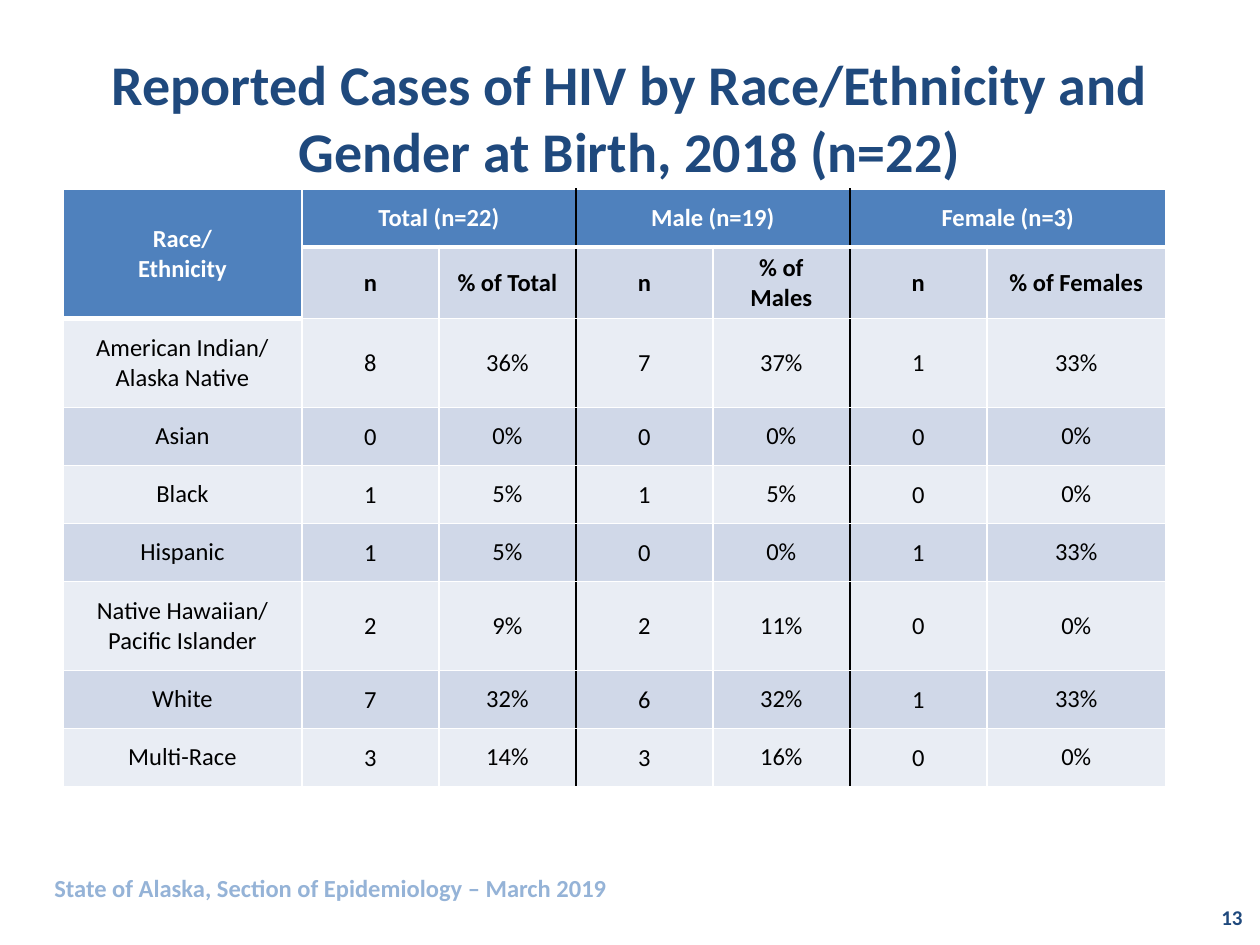
from dataclasses import dataclass

from lxml.etree import SubElement
from pptx import Presentation
from pptx.dml.color import RGBColor
from pptx.enum.text import MSO_ANCHOR as Anchor, PP_ALIGN as Align
from pptx.oxml.ns import qn
from pptx.util import Emu, Pt

EMU_PER_PX = 914400 // 126


@dataclass(frozen=True)
class Theme:
    font: str = "Calibri"
    navy: str = "1F497D"
    pale_blue: str = "95B3D7"
    header: str = "4F81BD"
    band_dark: str = "D0D8E8"
    band_light: str = "E9EDF4"
    white: str = "FFFFFF"
    black: str = "000000"
    title_size: int = 32
    body_size: int = 14
    number_size: int = 12
    thin: int = 1
    thick: int = 3


@dataclass(frozen=True)
class Label:
    text: str
    left: int
    top: int
    width: int
    height: int
    size: int
    color: str
    align: Align
    anchor: Anchor


@dataclass(frozen=True)
class CellStyle:
    fill: str
    color: str
    bold: bool


@dataclass(frozen=True)
class CaseRow:
    race: str
    total: tuple[str, str]
    male: tuple[str, str]
    female: tuple[str, str]

    def texts(self) -> list[str]:
        return [self.race, *self.total, *self.male, *self.female]


THEME = Theme()
HEADER = CellStyle(THEME.header, THEME.white, True)
SUBHEADER = CellStyle(THEME.band_dark, THEME.black, True)
BANDS = (
    CellStyle(THEME.band_light, THEME.black, False),
    CellStyle(THEME.band_dark, THEME.black, False),
)

LABELS = [
    Label("Reported Cases of HIV by Race/Ethnicity and Gender at Birth, 2018 (n=22)",
          63, 38, 1134, 157, THEME.title_size, THEME.navy, Align.CENTER, Anchor.MIDDLE),
    Label("13", 961, 892, 294, 50, THEME.number_size, THEME.navy,
          Align.RIGHT, Anchor.MIDDLE),
    Label("State of Alaska, Section of Epidemiology – March 2019",
          42, 867, 882, 43, THEME.body_size, THEME.pale_blue, Align.LEFT, Anchor.TOP),
]

TABLE_LEFT, TABLE_TOP = 63, 189
COLUMN_WIDTHS = [239] + [137] * 5 + [179]
ROW_HEIGHT, TWO_LINE_HEIGHT = 58, 89
COUNT_COLUMNS = (1, 3, 5)
GROUP_ENDS = (2, 4)

GROUP_HEADERS = ["Race/\nEthnicity", "Total (n=22)", "", "Male (n=19)", "", "Female (n=3)", ""]
COLUMN_HEADERS = ["", "n", "% of Total", "n", "% of Males", "n", "% of Females"]
CASES = [
    CaseRow("American Indian/\nAlaska Native", ("8", "36%"), ("7", "37%"), ("1", "33%")),
    CaseRow("Asian", ("0", "0%"), ("0", "0%"), ("0", "0%")),
    CaseRow("Black", ("1", "5%"), ("1", "5%"), ("0", "0%")),
    CaseRow("Hispanic", ("1", "5%"), ("0", "0%"), ("1", "33%")),
    CaseRow("Native Hawaiian/\nPacific Islander", ("2", "9%"), ("2", "11%"), ("0", "0%")),
    CaseRow("White", ("7", "32%"), ("6", "32%"), ("1", "33%")),
    CaseRow("Multi-Race", ("3", "14%"), ("3", "16%"), ("0", "0%")),
]


def px(length: int) -> Emu:
    return Emu(length * EMU_PER_PX)


def write_lines(frame, text: str, size: int, color: str, bold: bool, align: Align) -> None:
    """Write each line of the text as its own paragraph."""
    for index, line in enumerate(text.split("\n")):
        para = frame.add_paragraph() if index else frame.paragraphs[0]
        para.alignment = align
        span = para.add_run()
        span.text = line
        span.font.name = THEME.font
        span.font.size = Pt(size)
        span.font.bold = bold
        span.font.color.rgb = RGBColor.from_string(color)


def add_label(page, label: Label) -> None:
    box = page.shapes.add_textbox(
        px(label.left), px(label.top), px(label.width), px(label.height))
    box.text_frame.word_wrap = True
    box.text_frame.vertical_anchor = label.anchor
    write_lines(box.text_frame, label.text, label.size, label.color, True, label.align)


def add_border(cell, side: str, color: str, width: int) -> None:
    properties = cell._tc.get_or_add_tcPr()
    line = SubElement(properties, qn(f"a:ln{side}"), w=str(Pt(width)))
    SubElement(SubElement(line, qn("a:solidFill")), qn("a:srgbClr"), val=color)


def style_borders(cell, row: int, column: int) -> None:
    """Rule the cell in white, with black between the column groups."""
    last_column = column + cell.span_width - 1 if cell.is_merge_origin else column
    left = THEME.black if column - 1 in GROUP_ENDS else THEME.white
    right = THEME.black if last_column in GROUP_ENDS else THEME.white
    under_header = row == 0 or (row == 1 and column == 0)
    add_border(cell, "L", left, THEME.thin)
    add_border(cell, "R", right, THEME.thin)
    add_border(cell, "T", THEME.white, THEME.thin)
    add_border(cell, "B", THEME.white, THEME.thick if under_header else THEME.thin)


def cell_style(row: int, column: int) -> CellStyle:
    if row == 0 or (row == 1 and column == 0):
        return HEADER
    return SUBHEADER if row == 1 else BANDS[row % 2]


def fill_cell(cell, text: str, row: int, column: int) -> None:
    style = cell_style(row, column)
    style_borders(cell, row, column)
    cell.fill.solid()
    cell.fill.fore_color.rgb = RGBColor.from_string(style.fill)
    cell.vertical_anchor = Anchor.MIDDLE
    if row > 1 and column in COUNT_COLUMNS:
        cell.margin_left = cell.margin_right = cell.margin_top = px(1)
        cell.margin_bottom = 0
    if text:
        write_lines(cell.text_frame, text, THEME.body_size, style.color,
                    style.bold, Align.CENTER)


def add_case_table(page) -> None:
    rows = [GROUP_HEADERS, COLUMN_HEADERS] + [case.texts() for case in CASES]
    heights = [ROW_HEIGHT] * 2 + [
        TWO_LINE_HEIGHT if "\n" in case.race else ROW_HEIGHT for case in CASES]
    table = page.shapes.add_table(
        len(rows), len(COLUMN_WIDTHS), px(TABLE_LEFT), px(TABLE_TOP),
        px(sum(COLUMN_WIDTHS)), px(sum(heights))).table
    for column, width in zip(table.columns, COLUMN_WIDTHS):
        column.width = px(width)
    for table_row, height in zip(table.rows, heights):
        table_row.height = px(height)

    table.cell(0, 0).merge(table.cell(1, 0))
    for column in COUNT_COLUMNS:
        table.cell(0, column).merge(table.cell(0, column + 1))
    for row, texts in enumerate(rows):
        for column, text in enumerate(texts):
            fill_cell(table.cell(row, column), text, row, column)


def main() -> None:
    deck = Presentation()
    deck.slide_width, deck.slide_height = px(1260), px(945)
    page = deck.slides.add_slide(deck.slide_layouts[6])
    title, *footers = LABELS
    add_label(page, title)
    add_case_table(page)
    for footer in footers:
        add_label(page, footer)
    deck.save("out.pptx")


if __name__ == "__main__":
    main()
